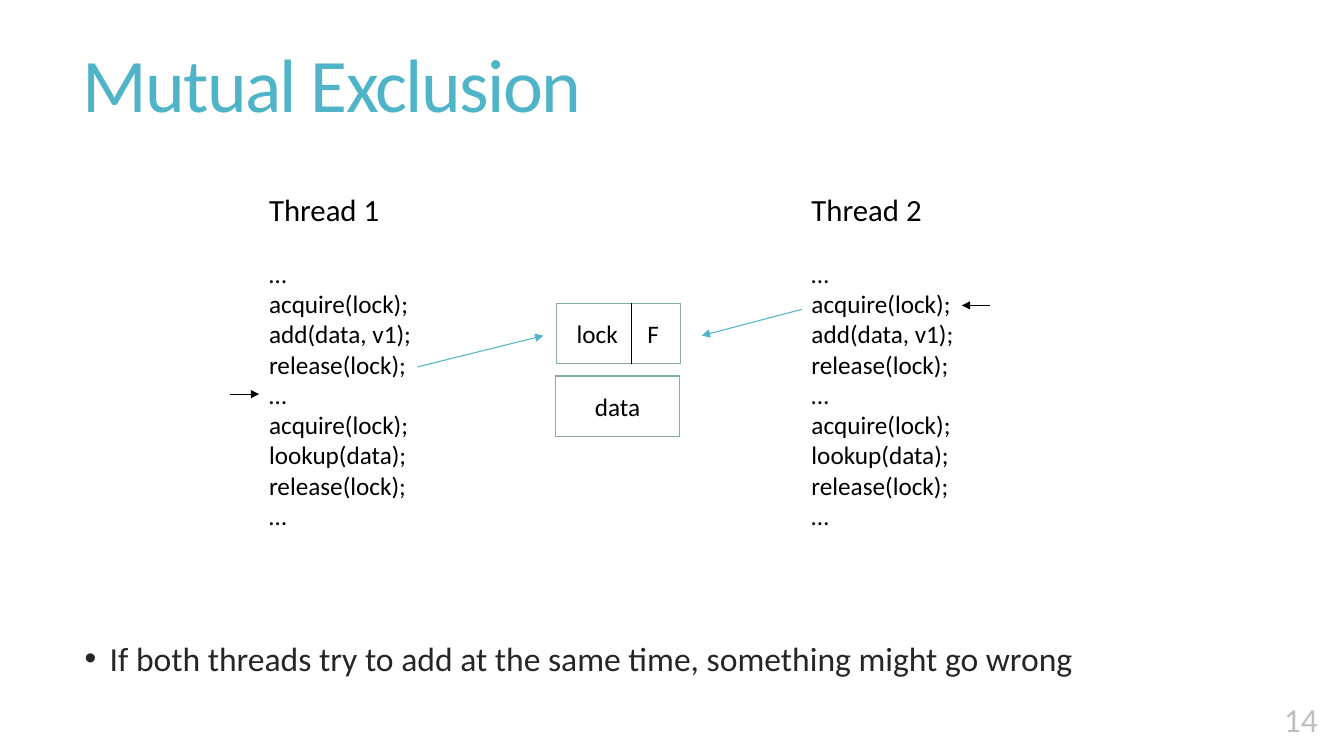
from lxml import etree
from pptx import Presentation
from pptx.dml.color import RGBColor
from pptx.enum.shapes import MSO_CONNECTOR, MSO_SHAPE
from pptx.enum.text import MSO_ANCHOR, PP_ALIGN
from pptx.oxml.ns import qn
from pptx.util import Emu, Pt

PX = 9144  # EMU per px, 100 px to the inch
FONT = "Calibri"
COLORS = {
    "accent": "50B4C8",
    "box_line": "84AC9D",
    "white": "FFFFFF",
    "ink": "000000",
    "body": "262626",
    "number": "BFBFBF",
}
RECTANGLE = MSO_SHAPE.RECTANGLE
STRAIGHT = MSO_CONNECTOR.STRAIGHT
TOP, MIDDLE, BOTTOM = MSO_ANCHOR.TOP, MSO_ANCHOR.MIDDLE, MSO_ANCHOR.BOTTOM
LEFT, CENTER, RIGHT = PP_ALIGN.LEFT, PP_ALIGN.CENTER, PP_ALIGN.RIGHT

CODE = [
    "…", "acquire(lock);", "add(data, v1);", "release(lock);",
    "…", "acquire(lock);", "lookup(data);", "release(lock);", "…",
]


def px(*lengths):
    return [Emu(length * PX) for length in lengths]


def rgb(name):
    return RGBColor.from_string(COLORS[name])


def apply(target, values):
    for name, value in values.items():
        setattr(target, name, value)


def add_line(paragraph, text, size, color="ink", **layout):
    run = paragraph.add_run()
    run.text = text
    apply(run.font, {"name": FONT, "size": Pt(size)})
    run.font.color.rgb = rgb(color)
    apply(paragraph, layout)
    return run


def add_text_box(slide, frame, **layout):
    text_frame = slide.shapes.add_textbox(*px(*frame)).text_frame
    apply(text_frame, {"word_wrap": True, **layout})
    return text_frame


def add_title(slide, text):
    title = add_text_box(slide, (72, -2, 1178, 181), vertical_anchor=MIDDLE)
    run = add_line(title.paragraphs[0], text, 54, "accent", line_spacing=0.85)
    run.font._element.set("spc", "-120")


def add_bullet(slide, text):
    body = add_text_box(slide, (74, 179, 1176, 550), vertical_anchor=BOTTOM,
                        margin_bottom=Emu(56 * PX))
    paragraph = body.paragraphs[0]
    add_line(paragraph, text, 24, "body", line_spacing=0.85)
    properties = paragraph._p.get_or_add_pPr()
    indent = 25 * PX
    properties.set("marL", str(indent))
    properties.set("indent", str(-indent))
    etree.SubElement(properties, qn("a:buFont")).set("typeface", "Arial")
    etree.SubElement(properties, qn("a:buChar")).set("char", "•")


def add_thread(slide, heading, left):
    listing = add_text_box(slide, (left, 184, 291, 350), vertical_anchor=TOP)
    add_line(listing.paragraphs[0], heading, 22)
    for row, statement in enumerate(CODE):
        gap = Pt(0 if row else 22)
        add_line(listing.add_paragraph(), statement, 18, space_before=gap)


def add_box(slide, text, left, top, alignment=CENTER, **layout):
    box = slide.shapes.add_shape(RECTANGLE, *px(left, top, 123, 60))
    box.shadow.inherit = False
    box.fill.solid()
    box.fill.fore_color.rgb = rgb("white")
    box.line.color.rgb = rgb("box_line")
    box.line.width = Pt(1)
    apply(box.text_frame, {"vertical_anchor": MIDDLE, **layout})
    paragraph = box.text_frame.paragraphs[0]
    add_line(paragraph, text, 18, alignment=alignment)
    return paragraph


def add_lock(slide):
    # The tab stop puts the state in the cell right of the divider
    paragraph = add_box(slide, "lock\tF", 552, 301, LEFT,
                        margin_left=Emu(20 * PX))
    tabs = etree.SubElement(paragraph._p.get_or_add_pPr(), qn("a:tabLst"))
    stop = etree.SubElement(tabs, qn("a:tab"))
    stop.set("pos", str(70 * PX))
    stop.set("algn", "l")
    add_connection(slide, (626, 361), (626, 301), "ink", arrow=False)


def add_connection(slide, start, end, color, arrow=True):
    connection = slide.shapes.add_connector(STRAIGHT, *px(*start, *end))
    connection.line.color.rgb = rgb(color)
    connection.line.width = Pt(0.75)
    if arrow:
        line = connection.line._get_or_add_ln()
        etree.SubElement(line, qn("a:tailEnd")).set("type", "triangle")
    etree.SubElement(connection._element.spPr, qn("a:effectLst"))


def main():
    presentation = Presentation()
    width, height = px(1333, 750)
    apply(presentation, {"slide_width": width, "slide_height": height})
    slide = presentation.slides.add_slide(presentation.slide_layouts[6])

    # Title, message and slide number
    add_title(slide, "Mutual Exclusion")
    add_bullet(slide, "If both threads try to add at the same time, "
                      "something might go wrong")
    number = add_text_box(slide, (1093, 669, 224, 69), vertical_anchor=BOTTOM)
    add_line(number.paragraphs[0], "14", 24, "number", alignment=RIGHT)

    # Threads and the data they share
    add_thread(slide, "Thread 1", 257)
    add_thread(slide, "Thread 2", 795)
    add_box(slide, "data", 551, 373)
    add_lock(slide)

    # Calls on the lock
    add_connection(slide, (414, 364), (539, 333), "accent")
    add_connection(slide, (795, 307), (696, 333), "accent")

    # Current statement of each thread
    add_connection(slide, (228, 391), (257, 391), "ink")
    add_connection(slide, (982, 303), (954, 303), "ink")

    presentation.save("out.pptx")


if __name__ == "__main__":
    main()
